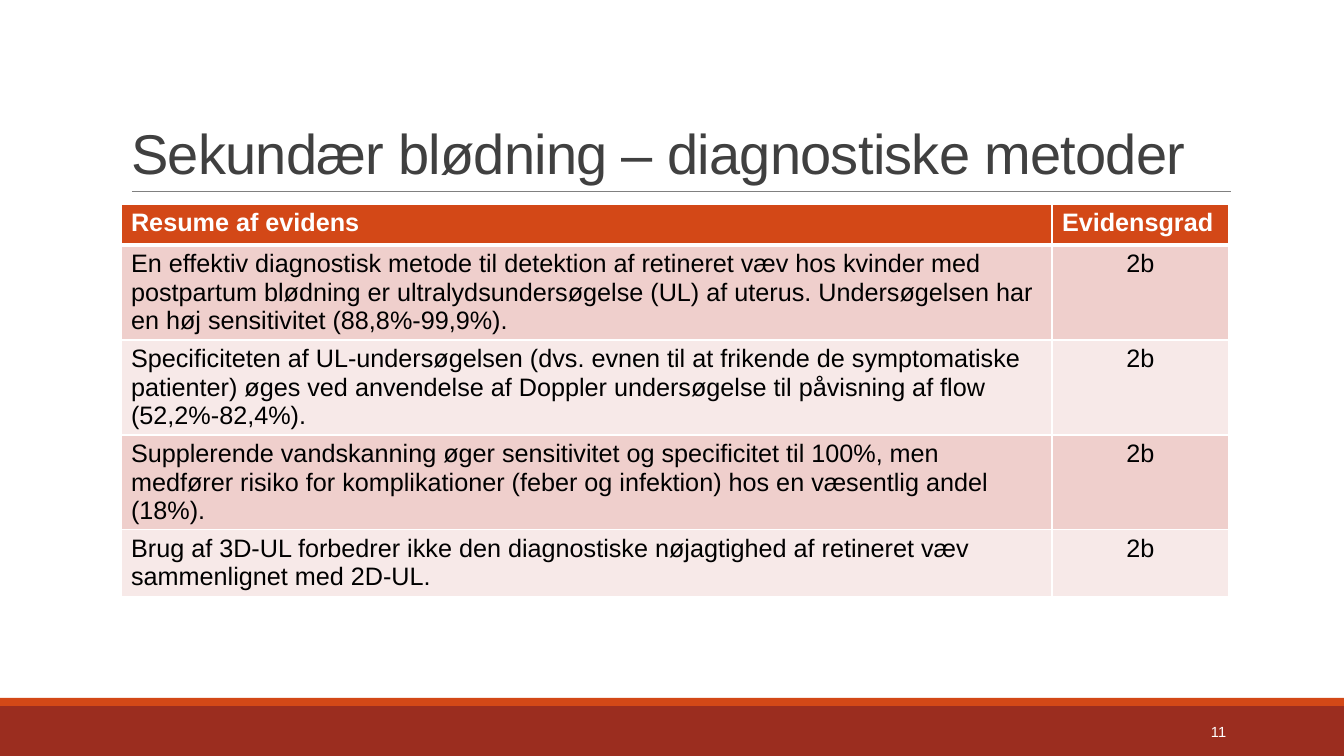
import dataclasses

import lxml.etree
import pptx
import pptx.dml.color
import pptx.enum.shapes
import pptx.enum.text
import pptx.oxml.ns
import pptx.util

EMU_PER_PX = 914400 / 100.8
ALIGN = pptx.enum.text.PP_ALIGN
ANCHOR = pptx.enum.text.MSO_ANCHOR


@dataclasses.dataclass(frozen=True)
class Theme:
    font: str = "Arial"
    title: str = "404040"
    body: str = "000000"
    white: str = "FFFFFF"
    rule: str = "808080"
    accent: str = "D34817"
    footer: str = "9B2D1F"
    bands: tuple = ("EFCFCC", "F7E9E8")
    title_size: float = 40
    table_size: float = 18
    number_size: float = 10.5


THEME = Theme()

COLUMN_WIDTHS = (931, 177)
ROW_HEIGHTS = (41, 95, 95, 95, 67)
EVIDENCE_ROWS = (
    ("Resume af evidens", "Evidensgrad"),
    ("En effektiv diagnostisk metode til detektion af retineret væv hos kvinder med "
     "postpartum blødning er ultralydsundersøgelse (UL) af uterus. Undersøgelsen har "
     "en høj sensitivitet (88,8%-99,9%).", "2b"),
    ("Specificiteten af UL-undersøgelsen (dvs. evnen til at frikende de symptomatiske "
     "patienter) øges ved anvendelse af Doppler undersøgelse til påvisning af flow "
     "(52,2%-82,4%).", "2b"),
    ("Supplerende vandskanning øger sensitivitet og specificitet til 100%, men "
     "medfører risiko for komplikationer (feber og infektion) hos en væsentlig andel "
     "(18%).", "2b"),
    ("Brug af 3D-UL forbedrer ikke den diagnostiske nøjagtighed af retineret væv "
     "sammenlignet med 2D-UL.", "2b"),
)


def px(*lengths):
    return [pptx.util.Emu(round(length * EMU_PER_PX)) for length in lengths]


def rgb(color):
    return pptx.dml.color.RGBColor.from_string(color)


def set_all(target, values):
    for name, value in values.items():
        setattr(target, name, value)


def write_text(frame, text, size, color, bold=False, align=ALIGN.LEFT):
    """Fill the frame with one formatted paragraph and return its span."""
    para = frame.paragraphs[0]
    para.alignment = align
    span = para.add_run()
    span.text = text
    set_all(span.font, {"name": THEME.font, "size": pptx.util.Pt(size), "bold": bold})
    span.font.color.rgb = rgb(color)
    return span


def add_band(page, top, height, color):
    band = page.shapes.add_shape(
        pptx.enum.shapes.MSO_SHAPE.RECTANGLE, *px(0, top, 1344, height))
    band.shadow.inherit = False
    band.fill.solid()
    band.fill.fore_color.rgb = rgb(color)
    band.line.fill.background()


def add_rule(page, left, right, top):
    rule = page.shapes.add_connector(
        pptx.enum.shapes.MSO_CONNECTOR.STRAIGHT, *px(left, top, right, top))
    rule.line.color.rgb = rgb(THEME.rule)
    rule.line.width = pptx.util.Pt(0.5)
    lxml.etree.SubElement(rule._element.spPr, pptx.oxml.ns.qn("a:effectLst"))


def place_title(page, text):
    title = page.shapes.title
    set_all(title, dict(zip(("left", "top", "width", "height"), px(121, 31, 1109, 160))))
    frame = title.text_frame
    set_all(frame, {"vertical_anchor": ANCHOR.BOTTOM, "word_wrap": True,
                    "auto_size": pptx.enum.text.MSO_AUTO_SIZE.NONE})
    span = write_text(frame, text, THEME.title_size, THEME.title)
    span.font._element.set("spc", "-50")
    frame.paragraphs[0].line_spacing = 0.85


def set_borders(cell, widths):
    """Draw white borders; widths maps a side (L, R, T, B) to points."""
    qn = pptx.oxml.ns.qn
    properties = cell._tc.get_or_add_tcPr()
    for side, points in widths.items():
        line = lxml.etree.SubElement(
            properties, qn(f"a:ln{side}"), w=str(pptx.util.Pt(points)))
        fill = lxml.etree.SubElement(line, qn("a:solidFill"))
        lxml.etree.SubElement(fill, qn("a:srgbClr"), val=THEME.white)


def format_cell(cell, text, row, column):
    header = row == 0
    set_borders(cell, {"L": 1, "R": 1, "T": 3 if row == 1 else 1, "B": 3 if header else 1})
    cell.fill.solid()
    cell.fill.fore_color.rgb = rgb(
        THEME.accent if header else THEME.bands[(row - 1) % 2])
    write_text(cell.text_frame, text, THEME.table_size,
               THEME.white if header else THEME.body, header,
               ALIGN.CENTER if column and not header else ALIGN.LEFT)


def add_evidence_table(page):
    table = page.shapes.add_table(
        len(EVIDENCE_ROWS), len(COLUMN_WIDTHS),
        *px(121, 204, sum(COLUMN_WIDTHS), sum(ROW_HEIGHTS))).table
    for column, width in zip(table.columns, px(*COLUMN_WIDTHS)):
        column.width = width
    for row, height in zip(table.rows, px(*ROW_HEIGHTS)):
        row.height = height
    for row, texts in enumerate(EVIDENCE_ROWS):
        for column, text in enumerate(texts):
            format_cell(table.cell(row, column), text, row, column)


def add_page_number(page, number):
    box = page.shapes.add_textbox(*px(1092, 712, 144, 40))
    set_all(box.text_frame, {"word_wrap": True, "vertical_anchor": ANCHOR.MIDDLE})
    write_text(box.text_frame, number, THEME.number_size, THEME.white, align=ALIGN.RIGHT)


def main():
    deck = pptx.Presentation()
    deck.slide_width, deck.slide_height = px(1344, 756)
    page = deck.slides.add_slide(deck.slide_layouts.get_by_name("Title Only"))
    add_band(page, 706, 50, THEME.footer)
    add_band(page, 698, 8, THEME.accent)
    add_rule(page, 132, 1231, 191)
    place_title(page, "Sekundær blødning – diagnostiske metoder")
    add_evidence_table(page)
    add_page_number(page, "11")
    deck.save("out.pptx")


if __name__ == "__main__":
    main()
